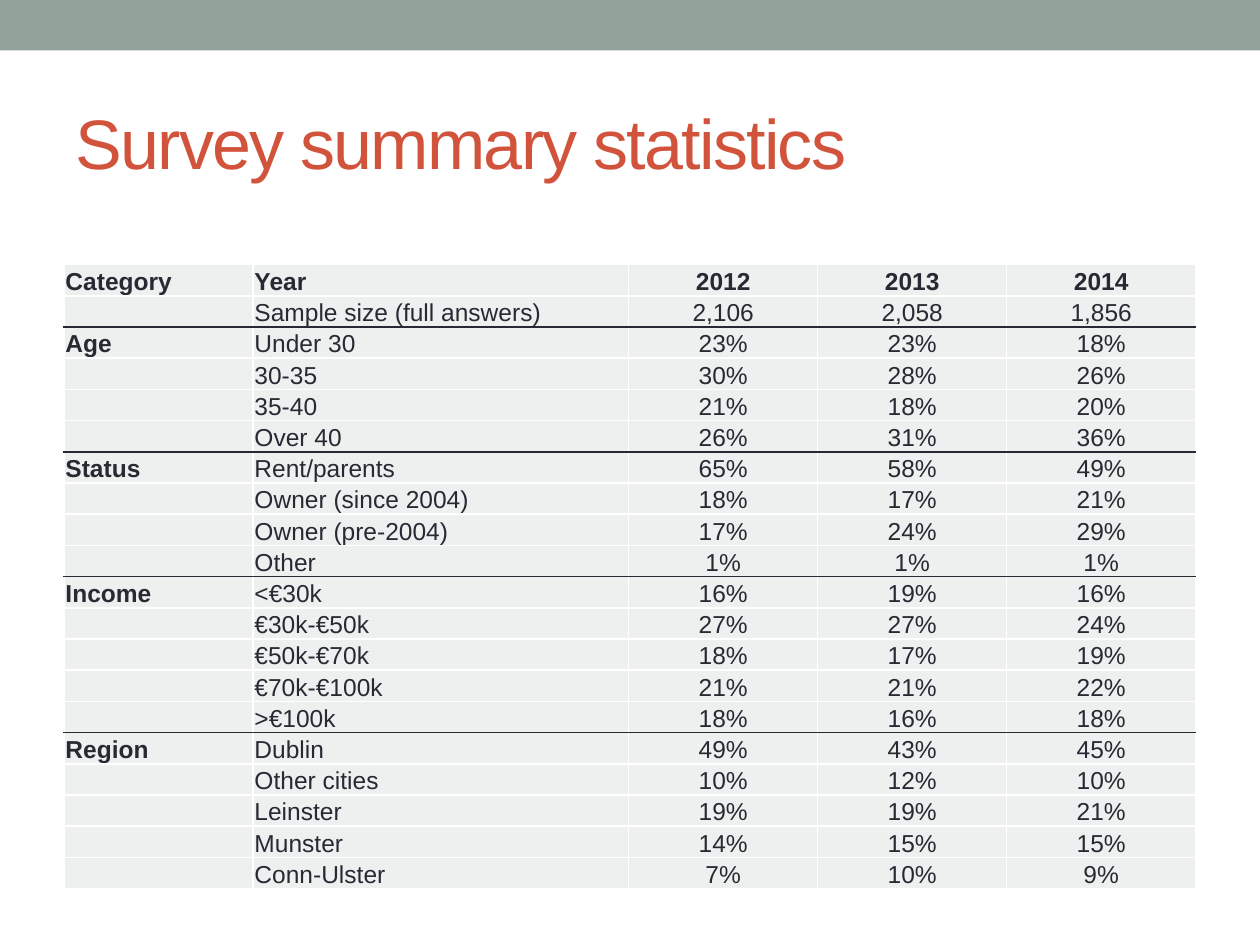
from lxml import etree
from pptx import Presentation
from pptx.dml.color import RGBColor
from pptx.enum import shapes, text
from pptx.oxml import ns
from pptx.util import Inches, Pt

FONT = "Arial"
DARK, WHITE, PALE = "292934", "FFFFFF", "EEF0EF"
BAR, TITLE = "93A299", "D2533C"
COL_WIDTHS = [1.5, 2.98, 1.5, 1.5, 1.5]
ROW_HEIGHT = 4.96 / 20

SECTIONS = [
    ("Category", [
        ("Year", "2012", "2013", "2014"),
        ("Sample size (full answers)", "2,106", "2,058", "1,856"),
    ]),
    ("Age", [
        ("Under 30", "23%", "23%", "18%"),
        ("30-35", "30%", "28%", "26%"),
        ("35-40", "21%", "18%", "20%"),
        ("Over 40", "26%", "31%", "36%"),
    ]),
    ("Status", [
        ("Rent/parents", "65%", "58%", "49%"),
        ("Owner (since 2004)", "18%", "17%", "21%"),
        ("Owner (pre-2004)", "17%", "24%", "29%"),
        ("Other", "1%", "1%", "1%"),
    ]),
    ("Income", [
        ("<€30k", "16%", "19%", "16%"),
        ("€30k-€50k", "27%", "27%", "24%"),
        ("€50k-€70k", "18%", "17%", "19%"),
        ("€70k-€100k", "21%", "21%", "22%"),
        (">€100k", "18%", "16%", "18%"),
    ]),
    ("Region", [
        ("Dublin", "49%", "43%", "45%"),
        ("Other cities", "10%", "12%", "10%"),
        ("Leinster", "19%", "19%", "21%"),
        ("Munster", "14%", "15%", "15%"),
        ("Conn-Ulster", "7%", "10%", "9%"),
    ]),
]


def rgb(color):
    return RGBColor.from_string(color)


def format_run(r, size, color, bold=False):
    r.font.name = FONT
    r.font.size = Pt(size)
    r.font.bold = bold
    r.font.color.rgb = rgb(color)


def add_bar(s):
    sp = s.shapes.add_shape(shapes.MSO_SHAPE.RECTANGLE, 0, 0, Inches(10), Inches(0.4))
    sp.shadow.inherit = False
    sp.fill.solid()
    sp.fill.fore_color.rgb = rgb(BAR)
    sp.line.fill.background()


def set_title(s, wording):
    sp = s.shapes.title
    sp.left, sp.top, sp.width, sp.height = map(Inches, (0.5, 0.58, 9, 1.08))
    tf = sp.text_frame
    tf.text = wording
    tf.auto_size = text.MSO_AUTO_SIZE.NONE
    tf.vertical_anchor = text.MSO_ANCHOR.MIDDLE
    p = tf.paragraphs[0]
    p.alignment = text.PP_ALIGN.LEFT
    r = p.runs[0]
    format_run(r, 40, TITLE)
    r.font._element.set("spc", "-100")


def set_borders(cell, top, bottom):
    """Draw white sides and the given top and bottom lines, all 1 pt."""
    tcPr = cell._tc.get_or_add_tcPr()
    sides = [("L", WHITE), ("R", WHITE), ("T", top), ("B", bottom)]
    for i, (side, color) in enumerate(sides):
        ln = etree.Element(ns.qn(f"a:ln{side}"), w=str(Pt(1)))
        fill = etree.SubElement(ln, ns.qn("a:solidFill"))
        etree.SubElement(fill, ns.qn("a:srgbClr"), val=color)
        tcPr.insert(i, ln)


def fill_cell(cell, wording, bold, centred):
    cell.fill.solid()
    cell.fill.fore_color.rgb = rgb(PALE)
    cell.vertical_anchor = text.MSO_ANCHOR.BOTTOM
    cell.margin_left = cell.margin_right = cell.margin_top = Inches(0.01)
    cell.margin_bottom = 0
    p = cell.text_frame.paragraphs[0]
    p.alignment = text.PP_ALIGN.CENTER if centred else text.PP_ALIGN.LEFT
    if wording:
        p.text = wording
        format_run(p.runs[0], 14, DARK, bold)
    else:
        # An empty cell takes its line height from the paragraph end
        etree.SubElement(p._p, ns.qn("a:endParaRPr"), sz="1400")


def add_statistics(s):
    rows = [(name if i == 0 else "", *values)
            for name, lines in SECTIONS for i, values in enumerate(lines)]
    starts = {i for i, row in enumerate(rows) if row[0] and i > 0}
    frame = s.shapes.add_table(len(rows), len(COL_WIDTHS), Inches(0.51), Inches(2.1),
                               Inches(sum(COL_WIDTHS)), Inches(ROW_HEIGHT * len(rows)))
    table = frame.table
    table.horz_banding = False
    for column, width in zip(table.columns, COL_WIDTHS):
        column.width = Inches(width)
    for i, row in enumerate(rows):
        table.rows[i].height = Inches(ROW_HEIGHT)
        top = DARK if i in starts else WHITE
        bottom = DARK if i + 1 in starts else WHITE
        for j, wording in enumerate(row):
            cell = table.cell(i, j)
            fill_cell(cell, wording, bold=i == 0 or j == 0, centred=j >= 2)
            set_borders(cell, top, bottom)


def main():
    prs = Presentation()
    prs.slide_width, prs.slide_height = Inches(10), Inches(7.5)
    s = prs.slides.add_slide(prs.slide_layouts[5])
    add_bar(s)
    set_title(s, "Survey summary statistics")
    add_statistics(s)
    prs.save("out.pptx")


if __name__ == "__main__":
    main()
